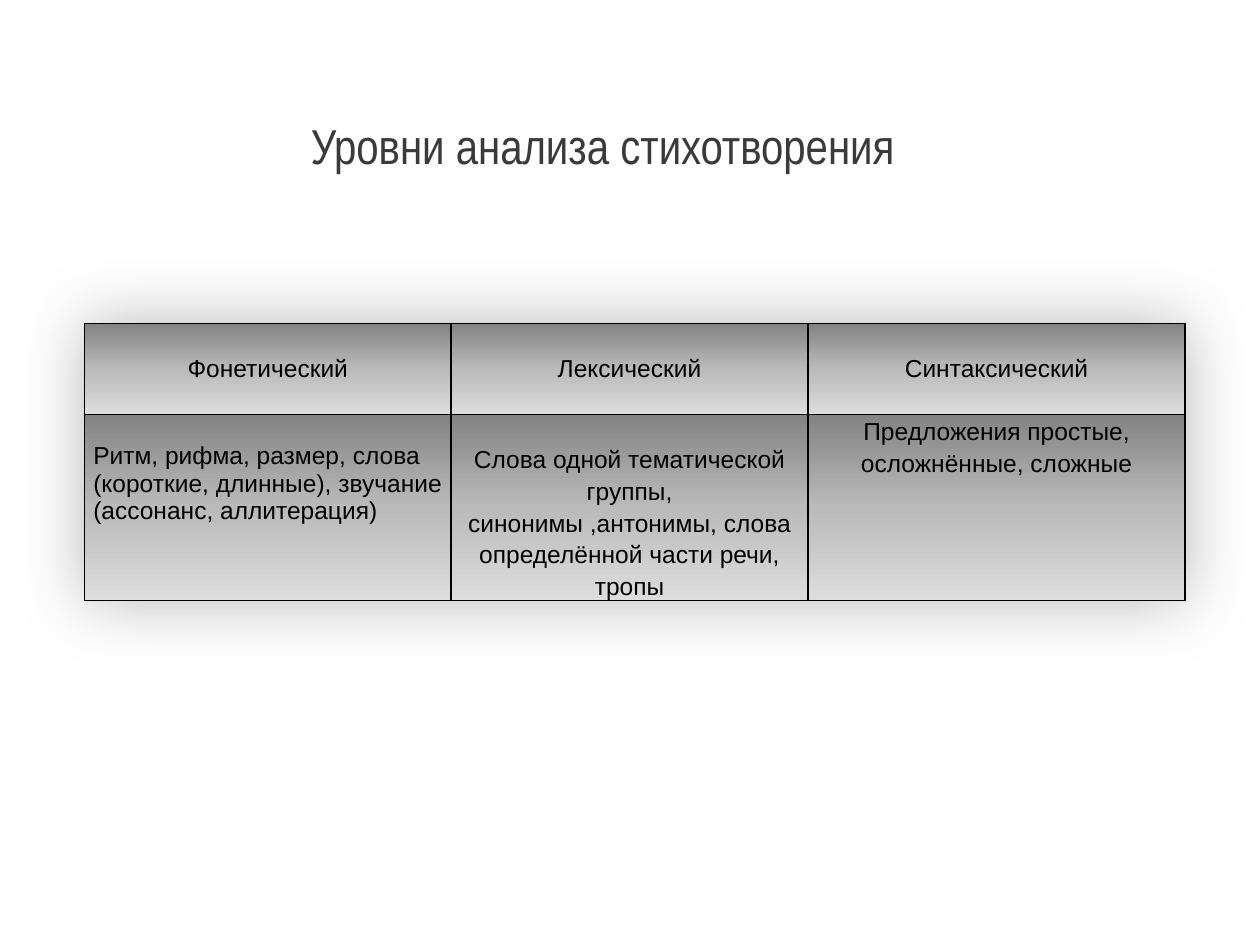
from lxml import etree
from pptx import Presentation
from pptx.dml.color import RGBColor
from pptx.enum.text import MSO_ANCHOR, PP_ALIGN
from pptx.oxml.ns import qn
from pptx.util import Pt

CENTER = PP_ALIGN.CENTER
LEFT = PP_ALIGN.LEFT
MIDDLE = MSO_ANCHOR.MIDDLE
TOP = MSO_ANCHOR.TOP

BLACK = RGBColor(0x00, 0x00, 0x00)
TITLE_GRAY = RGBColor(0x3A, 0x3A, 0x3A)
GRADIENT = (
    (0, RGBColor(0x83, 0x83, 0x83)),
    (50, RGBColor(0xBA, 0xBA, 0xBA)),
    (100, RGBColor(0xDD, 0xDD, 0xDD)),
)

COLUMN_WIDTHS = (209.5, 204, 215.5)
ROW_HEIGHTS = (52, 106.3)
INDENTED_TOP = 16
LEVELS = (
    ("Фонетический", "Лексический", "Синтаксический"),
    (
        "Ритм, рифма, размер, слова (короткие, длинные), звучание\n(ассонанс, аллитерация)",
        "Слова одной тематической группы,\vсинонимы ,антонимы, слова определённой части речи, тропы",
        "Предложения простые, осложнённые, сложные",
    ),
)


def add_element(parent, tag, **attributes):
    """Append a DrawingML element and return it."""
    element = etree.SubElement(parent, qn(tag))
    for name, value in attributes.items():
        element.set(name, str(value))
    return element


def add_color(parent, color):
    """Append a solid RGB colour and return its element."""
    return add_element(parent, "a:srgbClr", val=color)


def add_text(paragraph, text, font_name, size, color):
    """Add runs to a paragraph, with a line break at each vertical tab."""
    for index, part in enumerate(text.split("\v")):
        if index:
            paragraph.add_line_break()
        run = paragraph.add_run()
        run.text = part
        run.font.name = font_name
        run.font.size = Pt(size)
        run.font.color.rgb = color


def add_title(slide, text):
    """Add the centred slide title."""
    box = slide.shapes.add_textbox(Pt(-0.7), Pt(38), Pt(690), Pt(90))
    frame = box.text_frame
    frame.word_wrap = True
    frame.vertical_anchor = MIDDLE
    paragraph = frame.paragraphs[0]
    paragraph.alignment = CENTER
    add_text(paragraph, text, "Arial Narrow", 28, TITLE_GRAY)


def style_cell(cell):
    """Give a cell thin black borders and the vertical gray gradient."""
    properties = cell._tc.get_or_add_tcPr()
    for side in ("a:lnL", "a:lnR", "a:lnT", "a:lnB"):
        line = add_element(properties, side, w=Pt(1))
        add_color(add_element(line, "a:solidFill"), BLACK)
    gradient = add_element(properties, "a:gradFill", rotWithShape=1)
    stops = add_element(gradient, "a:gsLst")
    for position, color in GRADIENT:
        add_color(add_element(stops, "a:gs", pos=position * 1000), color)
    add_element(gradient, "a:lin", ang=90 * 60000, scaled=0)


def fill_cell(cell, text, alignment, line_spacing, top):
    """Write the paragraphs of a cell and set its margins."""
    cell.margin_left = cell.margin_right = Pt(5)
    cell.margin_top = Pt(top)
    cell.margin_bottom = Pt(0)
    cell.vertical_anchor = TOP
    frame = cell.text_frame
    for index, line in enumerate(text.split("\n")):
        paragraph = frame.add_paragraph() if index else frame.paragraphs[0]
        paragraph.alignment = alignment
        paragraph.line_spacing = line_spacing
        add_text(paragraph, line, "Arial", 14, BLACK)
    style_cell(cell)


def add_table_shadow(table):
    """Give the table a soft shadow on all sides."""
    properties = table._tbl.tblPr
    for child in list(properties):
        properties.remove(child)
    effects = add_element(properties, "a:effectLst")
    shadow = add_element(effects, "a:outerShdw", blurRad=Pt(40), dist=0, dir=0,
                         algn="ctr", rotWithShape=0)
    add_element(add_color(shadow, BLACK), "a:alpha", val=28000)


def add_levels_table(slide):
    """Add the table of analysis levels."""
    frame = slide.shapes.add_table(
        len(ROW_HEIGHTS), len(COLUMN_WIDTHS), Pt(48.3), Pt(184.8),
        Pt(sum(COLUMN_WIDTHS)), Pt(sum(ROW_HEIGHTS)))
    table = frame.table
    table.first_row = table.horz_banding = False
    add_table_shadow(table)
    for column, width in zip(table.columns, COLUMN_WIDTHS):
        column.width = Pt(width)
    for row, height, texts in zip(table.rows, ROW_HEIGHTS, LEVELS):
        row.height = Pt(height)
        for cell, text in zip(row.cells, texts):
            is_list = "\n" in text
            top = 0 if text == LEVELS[1][2] else INDENTED_TOP
            fill_cell(cell, text, LEFT if is_list else CENTER,
                      1.0 if is_list else 1.15, top)


def main():
    """Build the slide and save it."""
    presentation = Presentation()
    presentation.slide_width = Pt(720)
    presentation.slide_height = Pt(540)
    slide = presentation.slides.add_slide(presentation.slide_layouts[6])
    add_levels_table(slide)
    add_title(slide, "Уровни анализа стихотворения")
    presentation.save("out.pptx")


if __name__ == "__main__":
    main()
